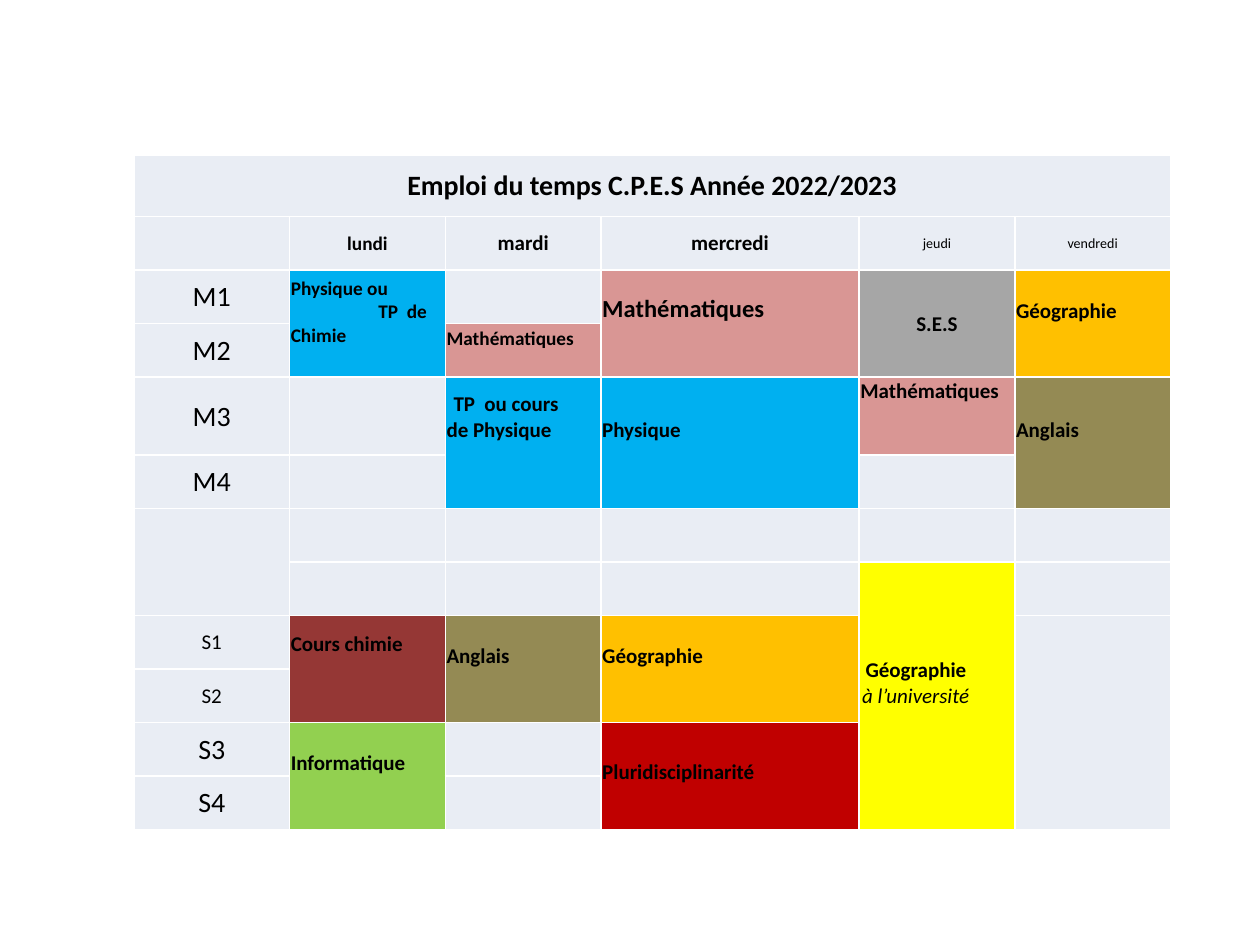
import pptx
import pptx.util
import pptx.dml.color
import pptx.enum.text
import pptx.oxml
import pptx.oxml.ns

Pt = pptx.util.Pt
RGBColor = pptx.dml.color.RGBColor
Align = pptx.enum.text.PP_ALIGN
Anchor = pptx.enum.text.MSO_ANCHOR

BLACK = RGBColor(0x00, 0x00, 0x00)
PALE = RGBColor(0xE9, 0xED, 0xF4)
BLUE = RGBColor(0x00, 0xB0, 0xF0)
PINK = RGBColor(0xD9, 0x96, 0x94)
GREY = RGBColor(0xA6, 0xA6, 0xA6)
ORANGE = RGBColor(0xFF, 0xC0, 0x00)
OLIVE = RGBColor(0x94, 0x8A, 0x54)
YELLOW = RGBColor(0xFF, 0xFF, 0x00)
BROWN = RGBColor(0x95, 0x37, 0x35)
GREEN = RGBColor(0x92, 0xD0, 0x50)
RED = RGBColor(0xC0, 0x00, 0x00)

FONT = "Calibri"
LINE_HEIGHT = 1.22
TITLE = "Emploi du temps C.P.E.S Année 2022/2023"
DAYS = [("lundi", 11, True), ("mardi", 12, True), ("mercredi", 12, True),
        ("jeudi", 8, False), ("vendredi", 8, False)]
HOURS = {2: ("M1", 16), 3: ("M2", 16), 4: ("M3", 16), 5: ("M4", 16),
         8: ("S1", 12), 9: ("S2", 12), 10: ("S3", 16), 11: ("S4", 16)}

# row, column, rows spanned, fill, size, lines left free below, (text, indent) lines
LESSONS = [
    (2, 1, 2, BLUE, 11, 1, [("Physique ou", 0), ("TP  de", 50), ("Chimie", 0)]),
    (2, 3, 2, PINK, 14, 1, [("Mathématiques", 0)]),
    (2, 5, 2, ORANGE, 12, 1, [("Géographie", 0)]),
    (3, 2, 1, PINK, 11, 1, [("Mathématiques", 0)]),
    (4, 2, 2, BLUE, 12, 2, [("TP  ou cours", 4), ("de Physique", 0)]),
    (4, 3, 2, BLUE, 12, 1, [("Physique", 0)]),
    (4, 4, 1, PINK, 12, 2, [("Mathématiques", 0)]),
    (4, 5, 2, OLIVE, 12, 1, [("Anglais", 0)]),
    (8, 1, 2, BROWN, 12, 2, [("Cours chimie", 0)]),
    (8, 2, 2, OLIVE, 12, 1, [("Anglais", 0)]),
    (8, 3, 2, ORANGE, 12, 1, [("Géographie", 0)]),
    (10, 1, 2, GREEN, 12, 1, [("Informatique", 0)]),
    (10, 3, 2, RED, 12, 0.33, [("Pluridisciplinarité", 0)]),
]


def style_cell(cell):
    """Give a cell white 1 pt borders and the pale fill."""
    props = cell._tc.get_or_add_tcPr()
    for side in ("lnL", "lnR", "lnT", "lnB"):
        props.append(pptx.oxml.parse_xml(
            f'<a:{side} {pptx.oxml.ns.nsdecls("a")} w="12700"><a:solidFill>'
            f'<a:srgbClr val="FFFFFF"/></a:solidFill></a:{side}>'))
    cell.fill.solid()
    cell.fill.fore_color.rgb = PALE


def write_cell(cell, lines, size, align=Align.CENTER, free_lines=0):
    """Write (text, indent, bold, italic) lines, raised by half the free lines."""
    cell.vertical_anchor = Anchor.MIDDLE
    cell.margin_left = cell.margin_right = cell.margin_top = Pt(0.7)
    cell.margin_bottom = Pt(free_lines * size * LINE_HEIGHT)
    frame = cell.text_frame
    for index, (text, indent, bold, italic) in enumerate(lines):
        para = frame.add_paragraph() if index else frame.paragraphs[0]
        para.alignment = align
        if indent:
            para._p.get_or_add_pPr().set("marL", str(Pt(indent)))
        span = para.add_run()
        span.text = text
        span.font.name = FONT
        span.font.size = Pt(size)
        span.font.bold = bold
        span.font.italic = italic
        span.font.color.rgb = BLACK


def merge_down(table, row, column, rows):
    """Merge a cell with those below it and return it."""
    cell = table.cell(row, column)
    if rows > 1:
        cell.merge(table.cell(row + rows - 1, column))
    return cell


def add_headings(table):
    """Write the title, the days and the hours."""
    title = table.cell(0, 0)
    title.merge(table.cell(0, 5))
    write_cell(title, [(TITLE, 0, True, False)], 16)
    for column, (day, size, bold) in enumerate(DAYS, 1):
        write_cell(table.cell(1, column), [(day, 0, bold, False)], size)
    for row, (hour, size) in HOURS.items():
        write_cell(table.cell(row, 0), [(hour, 0, False, False)], size)


def add_lessons(table):
    """Fill in the lessons and merge the long free slots."""
    for row, column, rows, color, size, free_lines, lines in LESSONS:
        cell = merge_down(table, row, column, rows)
        cell.fill.fore_color.rgb = color
        write_cell(cell, [(text, indent, True, False) for text, indent in lines],
                   size, Align.LEFT, free_lines)
    economics = merge_down(table, 2, 4, 2)
    economics.fill.fore_color.rgb = GREY
    write_cell(economics, [("S.E.S", 0, True, False)], 12)
    university = merge_down(table, 7, 4, 5)
    university.fill.fore_color.rgb = YELLOW
    write_cell(university, [("Géographie", 3, True, False),
                            ("à l’université", 1, False, True)], 12, Align.LEFT, 1)
    merge_down(table, 6, 0, 2)
    merge_down(table, 8, 5, 4)


def add_timetable(page, left, top, width, height):
    """Draw the timetable in the given box."""
    table = page.shapes.add_table(12, 6, Pt(left), Pt(top), Pt(width), Pt(height)).table
    table.first_row = False
    table.horz_banding = False
    wide, tall, title_height = 147.5, 44.6, 35
    narrow = (width - wide) / 5
    low = (height - tall - title_height) / 10
    for index, column in enumerate(table.columns):
        column.width = Pt(wide if index == 3 else narrow)
    for index, row in enumerate(table.rows):
        row.height = Pt({0: title_height, 4: tall}.get(index, low))
    for cell in table.iter_cells():
        style_cell(cell)
    add_headings(table)
    add_lessons(table)


def main():
    """Build and save the deck."""
    deck = pptx.Presentation()
    deck.slide_width, deck.slide_height = Pt(720), Pt(540)
    page = deck.slides.add_slide(deck.slide_layouts[6])
    add_timetable(page, 76.5, 88.6, 592.5, 385.6)
    deck.save("out.pptx")


if __name__ == "__main__":
    main()
